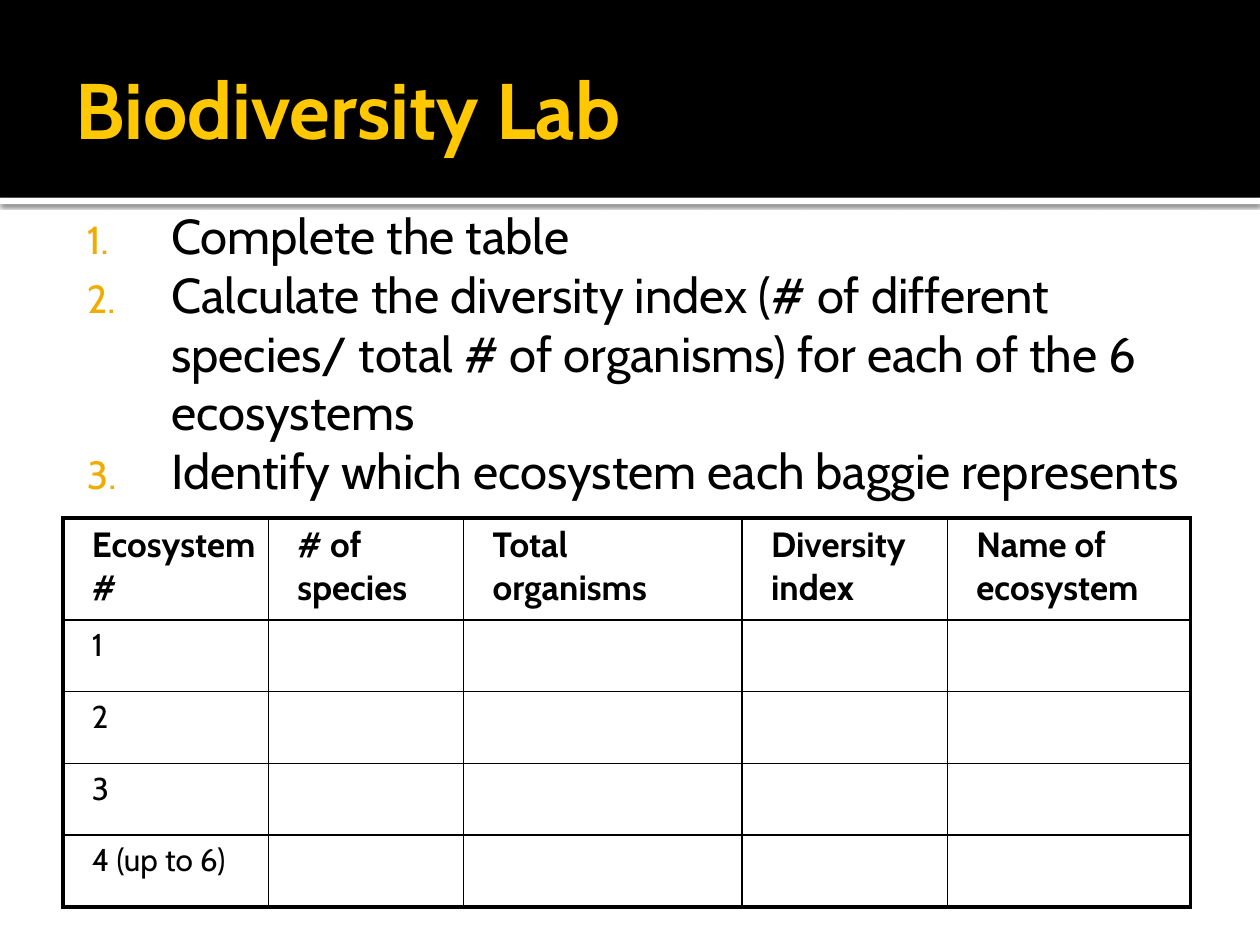
from pptx import Presentation
from pptx.dml.color import RGBColor
from pptx.enum.shapes import MSO_SHAPE
from pptx.enum.text import MSO_ANCHOR
from pptx.oxml import parse_xml
from pptx.oxml.ns import nsdecls
from pptx.util import Inches, Pt

# Content
TITLE = "Biodiversity Lab"
STEPS = [
    "Complete the table",
    "Calculate the diversity index (# of different species/ total # of "
    "organisms) for each of the 6 ecosystems",
    "Identify which ecosystem each baggie represents",
]
HEADS = ["Ecosystem #", "# of species", "Total organisms",
         "Diversity index", "Name of ecosystem"]
LABELS = ["1", "2", "3", "4 (up to 6)"]
ROWS = [HEADS] + [[mark] + [""] * (len(HEADS) - 1) for mark in LABELS]

# Format
BLACK = RGBColor(0, 0, 0)
WHITE = RGBColor(255, 255, 255)
GOLD = RGBColor(0xFF, 0xC8, 0x00)
AMBER = RGBColor(0xF0, 0xAD, 0x00)
FONT = "Cabin"
WIDE, HIGH = 10, 7.5
EDGE = WIDE * 0.05
BAND, STRIP = 1.57, 0.05
COLS = [1.63, 1.55, 2.21, 1.63, 1.93]
TALL = [0.81] + [0.57] * len(LABELS)
THIN, THICK = 1, 2.25

HEADING = dict(size=Pt(45), bold=True)
STEP = dict(size=Pt(28), bold=False)
HEAD = dict(size=Pt(20), bold=True)
LABEL = dict(size=Pt(18), bold=False)


def put(obj, values):
    for name, value in values.items():
        setattr(obj, name, value)


def write(para, text, style, color=BLACK):
    run = para.add_run()
    run.text = text
    put(run.font, dict(style, name=FONT))
    run.font.color.rgb = color


def indent(para, left, first=0):
    props = para._p.get_or_add_pPr()
    props.set("marL", str(Inches(left)))
    props.set("indent", str(Inches(first)))
    return props


def bar(slide, top, tall, color):
    shape = slide.shapes.add_shape(
        MSO_SHAPE.RECTANGLE, 0, Inches(top), Inches(WIDE), Inches(tall))
    shape.shadow.inherit = False
    shape.fill.solid()
    shape.fill.fore_color.rgb = color
    shape.line.fill.background()
    return shape


def box(slide, top, tall, inset, anchor):
    area = slide.shapes.add_textbox(
        Inches(EDGE), Inches(top), Inches(WIDE - 2 * EDGE), Inches(tall))
    frame = area.text_frame
    sides = ("margin_left", "margin_top", "margin_right", "margin_bottom")
    put(frame, dict(zip(sides, map(Inches, inset))))
    put(frame, dict(word_wrap=True, vertical_anchor=anchor))
    return frame


def number(para):
    props = indent(para, 0.8, -0.67)
    for tag in (f'buClr {nsdecls("a")}><a:srgbClr val="{AMBER}"/></a:buClr',
                f'buSzPct {nsdecls("a")} val="80000"/',
                f'buFont {nsdecls("a")} typeface="{FONT}"/',
                f'buAutoNum {nsdecls("a")} type="arabicPeriod"/'):
        props.append(parse_xml(f"<a:{tag}>"))


def border(cell, outer):
    props = cell._tc.get_or_add_tcPr()
    for spot, side in enumerate("LRTB"):
        width = Pt(THICK if outer[side] else THIN)
        props.insert(spot, parse_xml(
            f'<a:ln{side} {nsdecls("a")} w="{width}"><a:solidFill>'
            f'<a:srgbClr val="{BLACK}"/></a:solidFill></a:ln{side}>'))


deck = Presentation()
put(deck, dict(slide_width=Inches(WIDE), slide_height=Inches(HIGH)))
slide = deck.slides.add_slide(deck.slide_layouts[6])

# Header band over a white strip with a soft shadow
strip = bar(slide, BAND, STRIP, WHITE)
strip._element.spPr.find(
    "{*}effectLst").append(parse_xml(
        f'<a:outerShdw {nsdecls("a")} blurRad="{Pt(2.5)}" dist="{Pt(0.8)}" '
        f'dir="5400000"><a:srgbClr val="{BLACK}"><a:alpha val="60000"/>'
        '</a:srgbClr></a:outerShdw>'))
bar(slide, 0, BAND, BLACK)

# Title
frame = box(slide, 0.17, 1.37, (0.1, 0.05, 0.05, 0.05), MSO_ANCHOR.MIDDLE)
write(frame.paragraphs[0], TITLE, HEADING, GOLD)

# Numbered steps
frame = box(slide, 1.53, 2.72, (0.06, 0.1, 0.1, 0.05), MSO_ANCHOR.TOP)
for i, step in enumerate(STEPS):
    para = frame.add_paragraph() if i else frame.paragraphs[0]
    number(para)
    write(para, step, STEP)

# Table
grid = slide.shapes.add_table(
    len(ROWS), len(COLS), Inches(EDGE), Inches(4.11),
    Inches(sum(COLS)), Inches(sum(TALL))).table
put(grid, dict(first_row=False, horz_banding=False))
for col, width in zip(grid.columns, COLS):
    col.width = Inches(width)
for row, tall in zip(grid.rows, TALL):
    row.height = Inches(tall)
for r, row in enumerate(ROWS):
    for c, text in enumerate(row):
        cell = grid.cell(r, c)
        cell.fill.background()
        border(cell, dict(L=c == 0, R=c == len(COLS) - 1,
                          T=r == 0, B=r == len(ROWS) - 1))
        if text:
            para = cell.text_frame.paragraphs[0]
            indent(para, 0.13)
            write(para, text, LABEL if r else HEAD)

deck.save("out.pptx")
